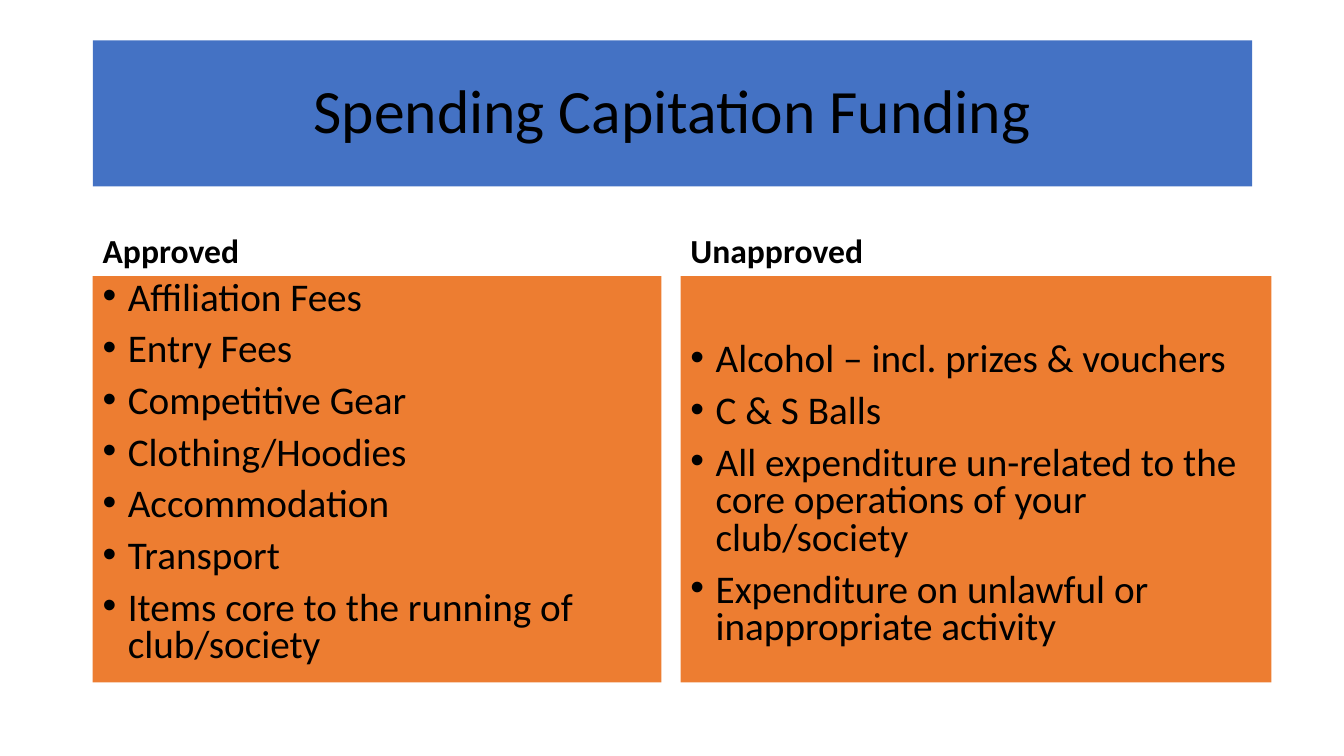
from pptx import Presentation
from pptx.dml.color import RGBColor
from pptx.enum.shapes import MSO_SHAPE
from pptx.enum.text import MSO_ANCHOR as ANCHOR, PP_ALIGN as ALIGN
from pptx.oxml import parse_xml
from pptx.oxml.ns import nsdecls
from pptx.util import Pt

PX = 9144  # 100 px to the inch
COLORS = {"banner": "4472C4", "panel": "ED7D31", "text": "000000"}
TITLE = {"size": Pt(44), "bold": False}
HEADING = {"size": Pt(24), "bold": True}
ITEM = {"size": Pt(28), "bold": False}
PANEL_TOP, PANEL_H = 274, 403

# heading, left, panel width, inset above the first item, items
COLUMNS = [
    ("Approved", 92, 564, 5,
     ["Affiliation Fees", "Entry Fees", "Competitive Gear", "Clothing/Hoodies",
      "Accommodation", "Transport", "Items core to the running of club/society"]),
    ("Unapproved", 675, 586, 66,
     ["Alcohol – incl. prizes & vouchers", "C & S Balls",
      "All expenditure un-related to the core operations of your club/society",
      "Expenditure on unlawful or inappropriate activity"]),
]


def px(*lengths):
    return [n * PX for n in lengths]


def write(p, text, fmt, spacing, align=ALIGN.LEFT):
    p.alignment, p.line_spacing = align, spacing
    r = p.add_run()
    r.text = text
    r.font.name = "Calibri"
    r.font.color.rgb = RGBColor.from_string(COLORS["text"])
    for key, value in fmt.items():
        setattr(r.font, key, value)


prs = Presentation()
prs.slide_width, prs.slide_height = px(1333, 750)
s = prs.slides.add_slide(prs.slide_layouts[5])

# Title banner
title = s.shapes.title
title.left, title.top, title.width, title.height = px(92, 40, 1150, 145)
title.fill.solid()
title.fill.fore_color.rgb = RGBColor.from_string(COLORS["banner"])
title.text_frame.vertical_anchor = ANCHOR.MIDDLE
write(title.text_frame.paragraphs[0], "Spending Capitation Funding", TITLE, 0.9, ALIGN.CENTER)

for heading, left, width, inset, items in COLUMNS:
    # Column heading, resting on the panel
    tf = s.shapes.add_textbox(*px(left, PANEL_TOP - 68, width, 68)).text_frame
    tf.word_wrap, tf.vertical_anchor = True, ANCHOR.BOTTOM
    write(tf.paragraphs[0], heading, HEADING, 0.9)

    # Panel with bulleted items
    sp = s.shapes.add_shape(MSO_SHAPE.RECTANGLE, *px(left, PANEL_TOP, width, PANEL_H))
    sp.shadow.inherit = False
    sp.fill.solid()
    sp.fill.fore_color.rgb = RGBColor.from_string(COLORS["panel"])
    sp.line.fill.background()
    tf = sp.text_frame
    tf.word_wrap, tf.vertical_anchor = True, ANCHOR.TOP
    tf.margin_top = inset * PX
    for i, item in enumerate(items):
        p = tf.add_paragraph() if i else tf.paragraphs[0]
        write(p, item, ITEM, 0.8)
        p.space_before = Pt(10 if i else 0)
        pPr = p._p.get_or_add_pPr()
        pPr.set("marL", str(25 * PX))
        pPr.set("indent", str(-25 * PX))
        for tag in ('buFont %s typeface="Arial"', 'buChar %s char="•"'):
            pPr.append(parse_xml(f"<a:{tag % nsdecls('a')}/>"))

prs.save("out.pptx")
